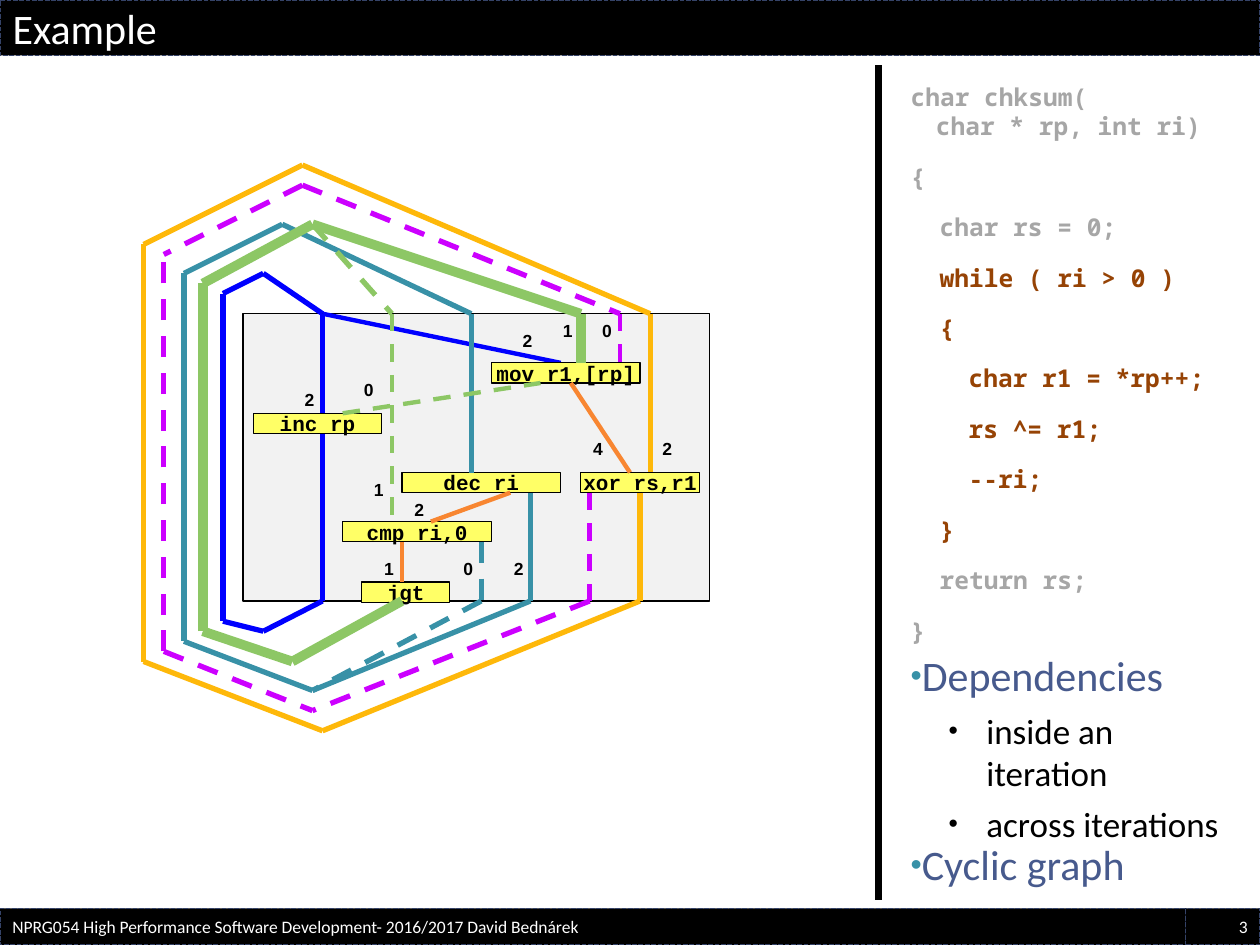
import copy
import itertools
import lxml.etree
import pptx
import pptx.dml.color
import pptx.enum.dml
import pptx.enum.shapes
import pptx.enum.text
import pptx.oxml.ns

Inches = pptx.util.Inches
Pt = pptx.util.Pt
RGB = pptx.dml.color.RGBColor
DASH = pptx.enum.dml.MSO_LINE
ALIGN = pptx.enum.text.PP_ALIGN
MIDDLE = pptx.enum.text.MSO_ANCHOR.MIDDLE
RECT = pptx.enum.shapes.MSO_SHAPE.RECTANGLE
STRAIGHT = pptx.enum.shapes.MSO_CONNECTOR.STRAIGHT
qn = pptx.oxml.ns.qn

BLACK = RGB(0, 0, 0)
WHITE = RGB(255, 255, 255)
NAVY = RGB(0x35, 0x43, 0x68)
PALE = RGB(0xF2, 0xF2, 0xF2)
YELLOW = RGB(0xFF, 0xFF, 0x66)
ORANGE = RGB(0xF8, 0x86, 0x31)
AMBER = RGB(0xFE, 0xB8, 0x0A)
BLUE = RGB(0, 0, 255)
TEAL = RGB(0x38, 0x91, 0xA7)
GREEN = RGB(0x8D, 0xC7, 0x65)
PURPLE = RGB(0xCC, 0, 255)
GRAY = RGB(0xA6, 0xA6, 0xA6)
BROWN = RGB(0x96, 0x43, 0x05)
INDIGO = RGB(0x47, 0x5A, 0x8D)

CODE = [
    ("char chksum(\vchar * rp, int ri)", 0, GRAY),
    ("{", 0, GRAY),
    ("char rs = 0;", 1, GRAY),
    ("while ( ri > 0 )", 1, BROWN),
    ("{", 1, BROWN),
    ("char r1 = *rp++;", 2, BROWN),
    ("rs ^= r1;", 2, BROWN),
    ("--ri;", 2, BROWN),
    ("}", 1, BROWN),
    ("return rs;", 1, GRAY),
    ("}", 0, GRAY),
]

NODES = [
    ("cmp ri,0", 2.72, 4.14, 1.18),
    ("jgt", 2.87, 4.62, 0.7),
    ("mov r1,[rp]", 3.9, 2.88, 1.18),
    ("inc rp", 2.01, 3.28, 1.02),
    ("dec ri", 3.19, 3.75, 1.26),
    ("xor rs,r1", 4.61, 3.75, 0.94),
]

UNDER = [
    (BLUE, 2.5, False, [(2.56, 3.28), (2.56, 2.49), (4.45, 2.88)]),
    (BLUE, 2.5, False, [(2.56, 3.43), (2.56, 4.77)]),
    (AMBER, 3, False, [(5.08, 4.77), (2.56, 5.8), (1.14, 5.25), (1.14, 1.94),
                       (2.4, 1.31), (5.16, 2.49), (5.16, 3.91)]),
]

OVER = [
    (ORANGE, 2.5, False, [(3.19, 4.3), (3.19, 4.62)]),
    (TEAL, 3, True, [(3.82, 4.77), (2.48, 5.48)]),
    (TEAL, 3, False, [(3.74, 3.75), (3.74, 2.49), (2.24, 1.78), (1.46, 2.17),
                      (1.46, 5.09), (2.48, 5.48), (4.21, 4.77), (4.21, 3.91)]),
    (GREEN, 5.5, False, [(3.19, 4.77), (2.32, 5.25), (1.61, 5.01), (1.61, 2.25),
                         (2.48, 1.78), (4.61, 2.49), (4.61, 2.88)]),
    (ORANGE, 2.5, False, [(4.53, 3.04), (5, 3.75)]),
    (TEAL, 3, True, [(3.82, 4.3), (3.82, 4.77)]),
    (ORANGE, 2.5, False, [(4.05, 3.91), (3.42, 4.14)]),
    (BLUE, 3, False, [(2.56, 2.49), (2.09, 2.17), (1.77, 2.33), (1.77, 4.93),
                      (2.09, 5.01), (2.56, 4.77)]),
    (PURPLE, 3, True, [(1.3, 5.17), (1.3, 2.02)]),
    (PURPLE, 3, True, [(2.4, 1.47), (1.3, 2.02)]),
    (PURPLE, 3, True, [(2.4, 1.47), (4.92, 2.49)]),
    (PURPLE, 2.5, True, [(4.92, 2.49), (4.92, 2.88)]),
    (PURPLE, 3, True, [(1.3, 5.17), (2.48, 5.64)]),
    (PURPLE, 3, True, [(4.68, 4.77), (2.48, 5.64)]),
    (PURPLE, 2.5, True, [(4.68, 3.91), (4.68, 4.77)]),
    (GREEN, 3, True, [(2.48, 1.78), (3.11, 2.49)]),
    (GREEN, 2.5, True, [(3.11, 2.49), (3.11, 4.14)]),
    (GREEN, 2.5, True, [(2.72, 3.28), (4.29, 3.04)]),
]

COSTS = [
    ("4", 4.61, 3.43), ("2", 3.19, 3.91), ("1", 2.95, 4.38), ("0", 3.58, 4.38),
    ("2", 2.32, 3.04), ("2", 4.05, 2.57), ("2", 5.16, 3.43), ("1", 4.37, 2.49),
    ("0", 4.68, 2.49), ("1", 2.87, 3.75), ("0", 2.79, 2.96), ("2", 3.98, 4.38),
]


def write(para, text, size=10, font="Calibri", color=BLACK, bold=False,
          align=ALIGN.LEFT, before=0, after=0, space=1.0, left=0, hang=0, dot=None):
    para.text = text
    para.alignment = align
    para.space_before, para.space_after = Pt(before), Pt(after)
    para.line_spacing = space
    for run in para.runs:
        run.font.size, run.font.name = Pt(size), font
        run.font.bold, run.font.color.rgb = bold, color
    for gap in para._p.findall(qn("a:br")):
        gap.insert(0, copy.deepcopy(para.runs[0]._r.rPr))
    props = para._p.get_or_add_pPr()
    props.set("marL", str(Inches(left)))
    props.set("indent", str(-Inches(hang)))
    if dot is not None:
        tint = lxml.etree.SubElement(props, qn("a:buClr"))
        lxml.etree.SubElement(tint, qn("a:srgbClr"), val=str(dot))
        lxml.etree.SubElement(props, qn("a:buSzPct"), val="76000")
        lxml.etree.SubElement(props, qn("a:buFont"), typeface="Arial")
        lxml.etree.SubElement(props, qn("a:buChar"), char="•")


def paint(shape, fill, edge, width):
    shape.fill.solid()
    shape.fill.fore_color.rgb = fill
    shape.line.color.rgb = edge
    shape.line.width = Pt(width)


def box(slide, x, y, w, h, fill, edge=BLACK, width=0.75):
    shape = slide.shapes.add_shape(RECT, Inches(x), Inches(y), Inches(w), Inches(h))
    shape.shadow.inherit = False
    paint(shape, fill, edge, width)
    return shape


def strip(shape, text, size, align=ALIGN.LEFT):
    paint(shape, BLACK, NAVY, 0.9)
    shape.line.dash_style = DASH.SQUARE_DOT
    shape.text_frame.vertical_anchor = MIDDLE
    write(shape.text_frame.paragraphs[0], text, size=size, color=WHITE, align=align)


def node(slide, text, x, y, w):
    shape = box(slide, x, y, w, 0.16, YELLOW)
    frame = shape.text_frame
    frame.margin_left = frame.margin_right = frame.margin_top = frame.margin_bottom = 0
    frame.word_wrap = False
    frame.vertical_anchor = MIDDLE
    write(frame.paragraphs[0], text, size=12, font="Courier New", bold=True,
          align=ALIGN.CENTER)
    return shape


def label(slide, x, y, w, h):
    frame = slide.shapes.add_textbox(Inches(x), Inches(y), Inches(w), Inches(h)).text_frame
    frame.word_wrap = True
    return frame


def route(slide, color, width, dashed, points):
    for start, end in itertools.pairwise(points):
        line = slide.shapes.add_connector(STRAIGHT, *map(Inches, start + end))
        line.line.color.rgb = color
        line.line.width = Pt(width)
        if dashed:
            line.line.dash_style = DASH.DASH
        lxml.etree.SubElement(line._element.spPr, qn("a:effectLst"))
    return line


def notes(slide):
    frame = label(slide, 7.13, 0.6, 2.76, 6.46)
    for row, (text, depth, color) in enumerate(CODE):
        para = frame.add_paragraph() if row else frame.paragraphs[0]
        hang = 0 if row else 0.2
        write(para, text, size=14, font="Noto Sans Mono", color=color, bold=True,
              before=6, after=6, left=0.23 * depth + hang, hang=hang)
    head = dict(size=24, color=INDIGO, space=0.9, dot=TEAL)
    item = dict(size=20, before=5, left=0.6, hang=0.3, dot=BLACK)
    for text, style in [("Dependencies", head), ("inside an iteration", item),
                        ("across iterations", item), ("Cyclic graph", head)]:
        write(frame.add_paragraph(), text, **style)


def main():
    deck = pptx.Presentation()
    deck.slide_width, deck.slide_height = Inches(10), Inches(7.5)
    slide = deck.slides.add_slide(deck.slide_layouts[5])

    title = slide.shapes.title
    title.left, title.top, title.width, title.height = map(Inches, (0, 0, 10, 0.44))
    strip(title, "Example", 24)
    route(slide, BLACK, 4, False, [(6.97, 0.52), (6.97, 7.14)])
    notes(slide)
    strip(box(slide, 9.41, 7.21, 0.59, 0.29, BLACK), "3", 10, ALIGN.RIGHT)
    strip(box(slide, 0, 7.21, 9.41, 0.29, BLACK),
          "NPRG054 High Performance Software Development- 2016/2017 David Bednárek", 10)

    box(slide, 1.93, 2.49, 3.7, 2.28, PALE)
    for line in UNDER:
        route(slide, *line)
    nodes = {item[0]: node(slide, *item) for item in NODES}
    for line in OVER:
        route(slide, *line)
    link = route(slide, AMBER, 3, False, [(5.08, 3.91), (5.08, 4.77)])
    link.begin_connect(nodes["xor rs,r1"], 2)
    for text, x, y in COSTS:
        write(label(slide, x, y, 0.24, 0.27).paragraphs[0], text, font="Arial", bold=True)
    deck.save("out.pptx")


if __name__ == "__main__":
    main()
